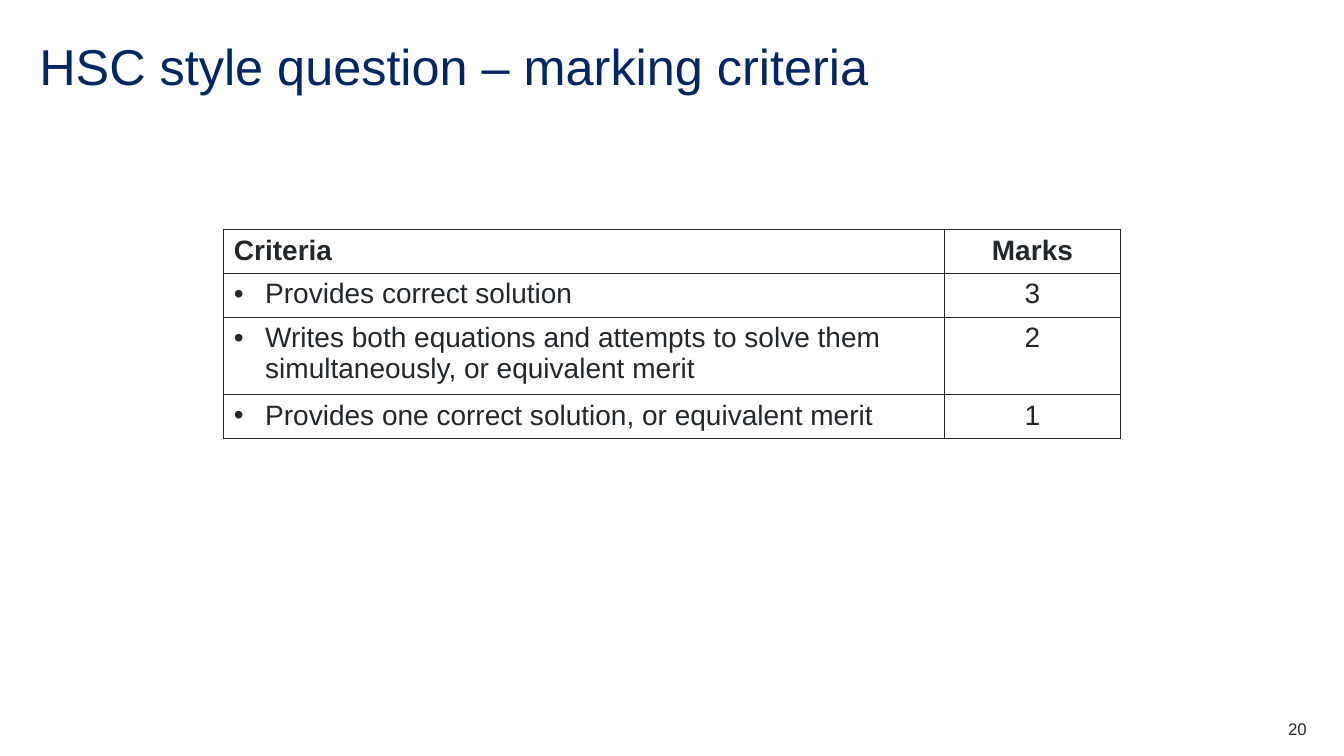
from lxml.etree import SubElement
from pptx import Presentation
from pptx.dml.color import RGBColor
from pptx.enum.text import MSO_ANCHOR, PP_ALIGN
from pptx.oxml.ns import qn
from pptx.util import Inches, Pt

# Content
TITLE = "HSC style question – marking criteria"
PAGE = "20"
HEADER = ("Criteria", "Marks")
CRITERIA = [
    ("Provides correct solution", "3"),
    ("Writes both equations and attempts to solve them "
     "simultaneously, or equivalent merit", "2"),
    ("Provides one correct solution, or equivalent merit", "1"),
]

# Style and layout, in inches
COLORS = {"title": "002664", "text": "22272B"}
FONT = "Arial"
WIDTH, HEIGHT = 13.33, 7.5
MARGIN = 0.39
COLUMNS = (7.15, 1.74)
LINE_H, PAD = 0.31, 0.1
ROW_LINES = (1, 1, 2, 1)
TABLE_TOP = 2.28
INDENT = 0.31


def write(tf, text, size=20, color="text", bold=False, align=PP_ALIGN.LEFT, spacing=None):
    p = tf.paragraphs[0]
    p.alignment = align
    if spacing:
        p.line_spacing = spacing
    r = p.add_run()
    r.text = text
    r.font.name, r.font.size, r.font.bold = FONT, Pt(size), bold
    r.font.color.rgb = RGBColor.from_string(COLORS[color])
    return p


def add_text(slide, text, left, top, width, height, **fmt):
    tf = slide.shapes.add_textbox(*map(Inches, (left, top, width, height))).text_frame
    tf.word_wrap = True
    tf.vertical_anchor = MSO_ANCHOR.MIDDLE
    tf.margin_left = tf.margin_right = tf.margin_top = tf.margin_bottom = 0
    write(tf, text, **fmt)


def add_bullet(p):
    pPr = p._p.get_or_add_pPr()
    pPr.set("marL", str(Inches(INDENT)))
    pPr.set("indent", str(-Inches(INDENT)))
    SubElement(pPr, qn("a:buFont")).set("typeface", FONT)
    SubElement(pPr, qn("a:buChar")).set("char", "•")


def add_borders(cell):
    tcPr = cell._tc.get_or_add_tcPr()
    for side in ("a:lnL", "a:lnR", "a:lnT", "a:lnB"):
        ln = SubElement(tcPr, qn(side), w=str(Pt(1)))
        fill = SubElement(ln, qn("a:solidFill"))
        SubElement(fill, qn("a:srgbClr")).set("val", COLORS["text"])


prs = Presentation()
prs.slide_width, prs.slide_height = Inches(WIDTH), Inches(HEIGHT)
slide = prs.slides.add_slide(prs.slide_layouts[6])

# Title
add_text(slide, TITLE, MARGIN, MARGIN, WIDTH - 2 * MARGIN, 0.6,
         size=36, color="title", spacing=0.9)

# Marking table, centred on the slide
rows = [HEADER, *CRITERIA]
heights = [LINE_H * n + PAD for n in ROW_LINES]
width = sum(COLUMNS)
table = slide.shapes.add_table(
    len(rows), len(COLUMNS), Inches((WIDTH - width) / 2), Inches(TABLE_TOP),
    Inches(width), Inches(sum(heights))).table
table.first_row = table.horz_banding = False
for column, w in zip(table.columns, COLUMNS):
    column.width = Inches(w)
for i, (row, h) in enumerate(zip(rows, heights)):
    table.rows[i].height = Inches(h)
    for j, text in enumerate(row):
        cell = table.cell(i, j)
        p = write(cell.text_frame, text, bold=i == 0,
                  align=PP_ALIGN.CENTER if j else PP_ALIGN.LEFT)
        if i and not j:
            add_bullet(p)
        add_borders(cell)
        cell.fill.background()

# Page number
add_text(slide, PAGE, WIDTH - MARGIN - 0.77, 7.13, 0.79, 0.2,
         size=12, align=PP_ALIGN.RIGHT)

prs.save("out.pptx")
